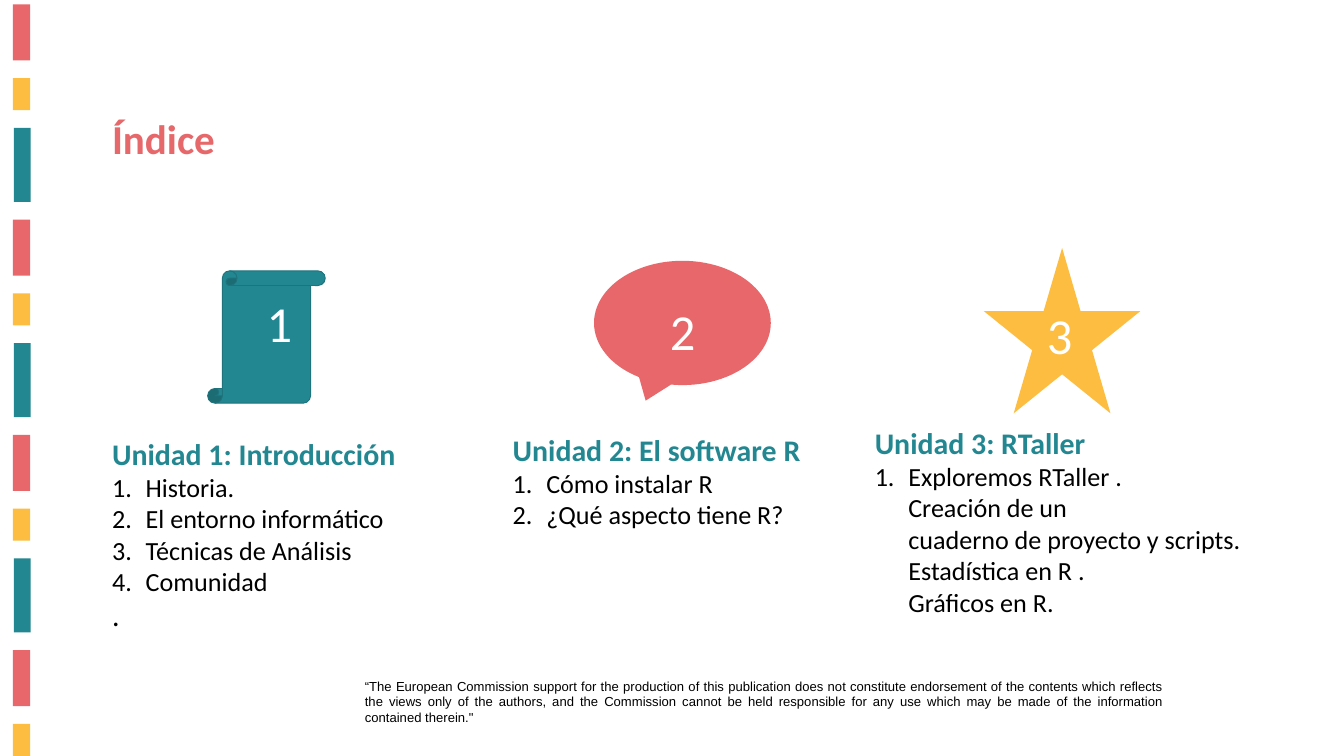
from typing import NamedTuple

import lxml.etree
import pptx
import pptx.dml.color
import pptx.enum.shapes
import pptx.enum.text
import pptx.oxml.ns
import pptx.util

Pt = pptx.util.Pt
Shapes = pptx.enum.shapes.MSO_SHAPE

COLORS = {
    "red": "E8676A",
    "title": "E7686A",
    "yellow": "FDBD40",
    "teal": "238791",
    "teal_edge": "1E737C",
    "black": "000000",
    "white": "FFFFFF",
}
HEADING_FONT = "Calibri"
NOTICE_FONT = "Arial"
NUMBER_INDENT = 36
STRIPE_COUNT = 11
STRIPE_PERIOD = 230.6


class Box(NamedTuple):
    left: float
    top: float
    width: float
    height: float


class Style(NamedTuple):
    size: float
    color: str
    bold: bool = False
    font: str = HEADING_FONT


class Unit(NamedTuple):
    heading: str
    items: list[str]
    box: Box
    icon: Shapes
    icon_box: Box
    icon_color: str
    adjustments: list[float]
    number_box: Box
    edge: str | None = None
    closing: str = ""


STRIPES = [
    (Box(13.7, 4.8, 18.7, 60), "red"),
    (Box(13.7, 83.7, 18.7, 34.4), "yellow"),
    (Box(14.8, 137, 18, 79.4), "teal"),
]

TITLE = Style(44, "title", bold=True)
HEADING = Style(32, "teal", bold=True)
ITEM = Style(28, "black")
CLOSING = Style(32, "black")
NUMBER = Style(54, "white")
NOTICE = Style(14, "black", font=NOTICE_FONT)

UNITS = [
    Unit("Unidad 1: Introducción",
         ["Historia.", "El entorno informático", "Técnicas de Análisis", "Comunidad"],
         Box(113, 463, 430, 220.3),
         Shapes.VERTICAL_SCROLL, Box(222.5, 290.2, 126, 141.8), "teal", [0.125],
         Box(278.6, 309.6, 113.8, 72.7), edge="teal_edge", closing="."),
    Unit("Unidad 2: El software R",
         ["Cómo instalar R", "¿Qué aspecto tiene R?"],
         Box(542.2, 458.6, 387.4, 113.8),
         Shapes.OVAL_CALLOUT, Box(636.5, 279.4, 189.4, 133.2), "red", [-0.208, 0.625],
         Box(710.6, 317.5, 77.8, 72.7)),
    Unit("Unidad 3: RTaller",
         ["Exploremos RTaller .\nCreación de un \ncuaderno de proyecto y scripts. \n"
          "Estadística en R .\nGráficos en R."],
         Box(930.2, 451.4, 434.2, 249.8),
         Shapes.STAR_5_POINT, Box(1054.1, 265.7, 167.8, 177.1), "yellow",
         [0.191, 1.051, 1.106],
         Box(1114.6, 321.8, 108, 72.7)),
]


def rgb(name: str) -> pptx.dml.color.RGBColor:
    return pptx.dml.color.RGBColor.from_string(COLORS[name])


def add_filled_shape(slide, kind: Shapes, box: Box, color: str, edge: str | None = None):
    shape = slide.shapes.add_shape(kind, *map(Pt, box))
    shape.shadow.inherit = False
    shape.fill.solid()
    shape.fill.fore_color.rgb = rgb(color)
    if edge:
        shape.line.color.rgb = rgb(edge)
        shape.line.width = Pt(1)
    else:
        shape.line.fill.background()
    return shape


def add_runs(paragraph, text: str, style: Style) -> None:
    """Add one run per line, with line breaks between them."""
    for index, line in enumerate(text.split("\n")):
        if index:
            paragraph.add_line_break()
        run = paragraph.add_run()
        run.text = line
        run.font.name = style.font
        run.font.size = Pt(style.size)
        run.font.bold = style.bold
        run.font.color.rgb = rgb(style.color)


def add_text(slide, box: Box, text: str, style: Style):
    frame = slide.shapes.add_textbox(*map(Pt, box)).text_frame
    frame.word_wrap = True
    frame.auto_size = pptx.enum.text.MSO_AUTO_SIZE.SHAPE_TO_FIT_TEXT
    add_runs(frame.paragraphs[0], text, style)
    return frame


def number_paragraph(paragraph) -> None:
    """Give the paragraph an automatic number with a hanging indent."""
    qn = pptx.oxml.ns.qn
    properties = paragraph._p.get_or_add_pPr()
    properties.set("marL", str(Pt(NUMBER_INDENT)))
    properties.set("indent", str(-Pt(NUMBER_INDENT)))
    bullet_color = lxml.etree.SubElement(properties, qn("a:buClr"))
    lxml.etree.SubElement(bullet_color, qn("a:srgbClr"), val=COLORS["black"])
    lxml.etree.SubElement(properties, qn("a:buFont"), typeface="+mj-lt")
    lxml.etree.SubElement(properties, qn("a:buAutoNum"), type="arabicPeriod")


def add_stripes(slide) -> None:
    for index in range(STRIPE_COUNT):
        cycle, position = divmod(index, len(STRIPES))
        box, color = STRIPES[position]
        box = box._replace(top=box.top + cycle * STRIPE_PERIOD)
        add_filled_shape(slide, Shapes.RECTANGLE, box, color)


def add_unit(slide, number: int, unit: Unit) -> None:
    icon = add_filled_shape(slide, unit.icon, unit.icon_box, unit.icon_color, unit.edge)
    for index, value in enumerate(unit.adjustments):
        icon.adjustments[index] = value
    add_text(slide, unit.number_box, str(number), NUMBER)

    frame = add_text(slide, unit.box, unit.heading, HEADING)
    for item in unit.items:
        paragraph = frame.add_paragraph()
        number_paragraph(paragraph)
        add_runs(paragraph, item, ITEM)
    if unit.closing:
        add_runs(frame.add_paragraph(), unit.closing, CLOSING)


def main() -> None:
    presentation = pptx.Presentation()
    presentation.slide_width = Pt(1440)
    presentation.slide_height = Pt(810)
    slide = presentation.slides.add_slide(presentation.slide_layouts[6])

    add_stripes(slide)
    notice = add_text(
        slide, Box(383.8, 722.9, 869.8, 58.3),
        "“The European Commission support for the production of this publication does not "
        "constitute endorsement of the contents which reflects the views only of the authors, "
        "and the Commission cannot be held responsible for any use which may be made of the "
        "information contained therein.\"", NOTICE)
    notice.paragraphs[0].alignment = pptx.enum.text.PP_ALIGN.JUSTIFY
    add_text(slide, Box(113, 118.1, 487.4, 60.5), "Índice", TITLE)
    for number, unit in enumerate(UNITS, start=1):
        add_unit(slide, number, unit)

    presentation.save("out.pptx")


if __name__ == "__main__":
    main()
